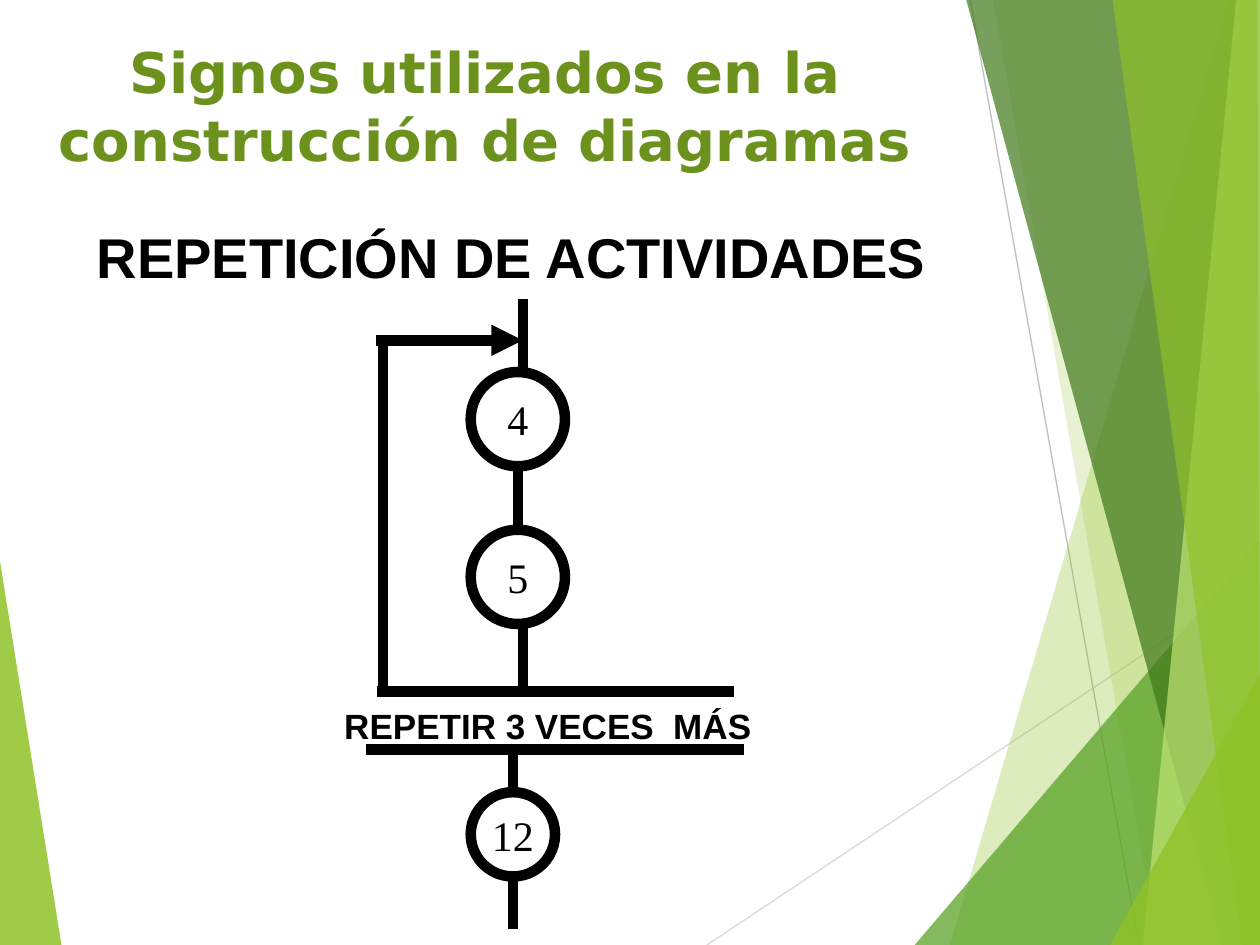
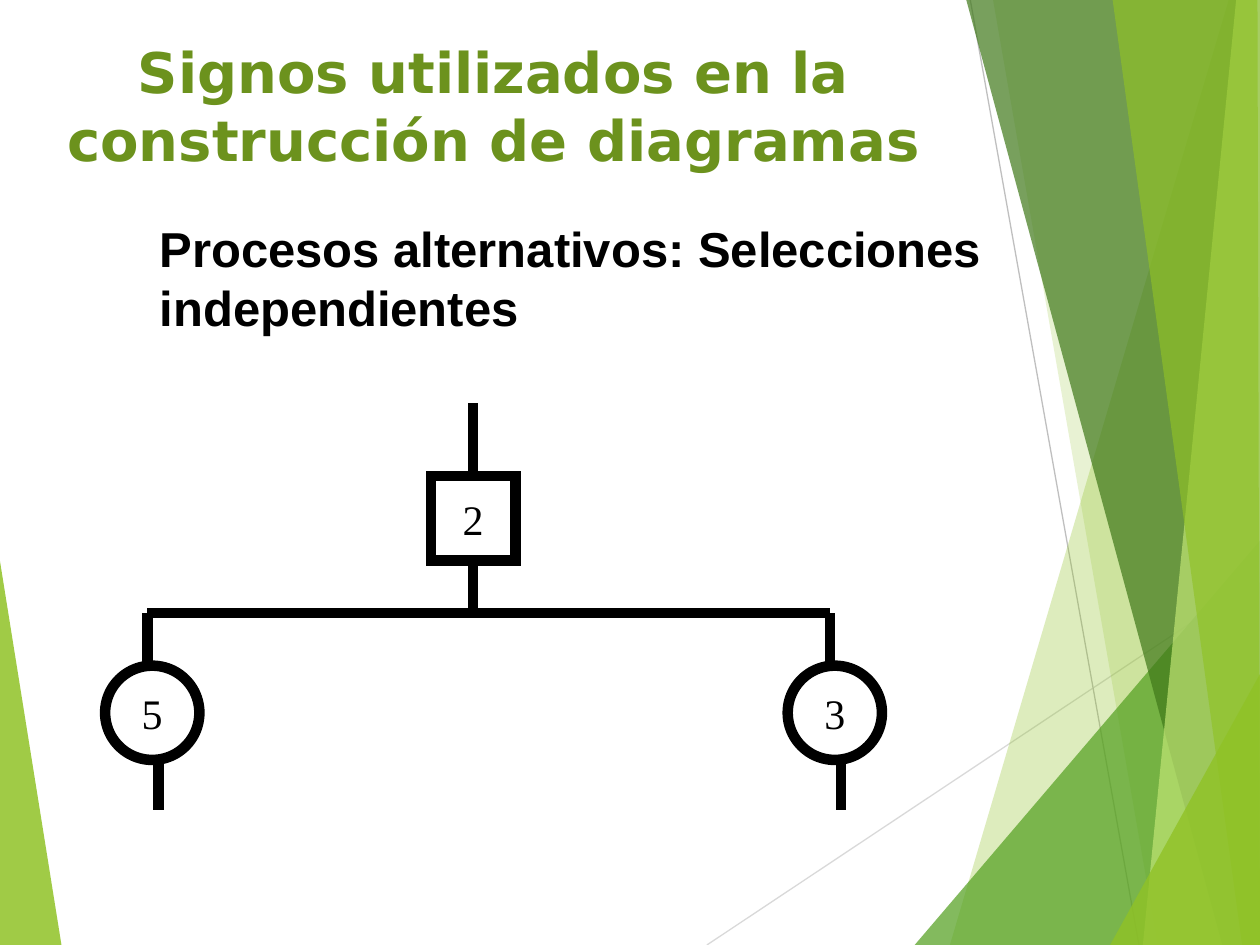
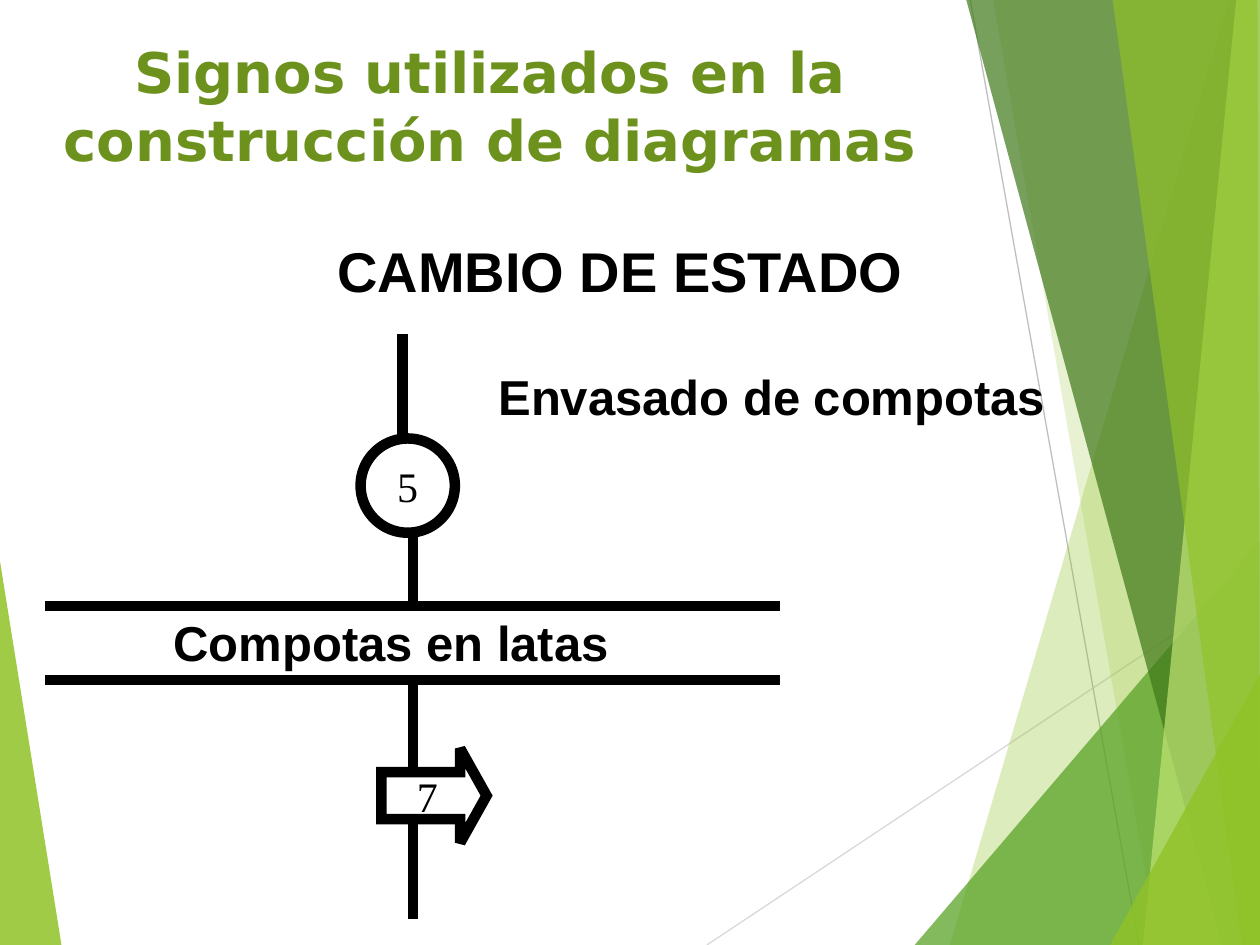
from lxml import etree
from pptx import Presentation
from pptx.dml.color import RGBColor
from pptx.enum import shapes, text
from pptx.oxml import ns
from pptx.util import Cm, Pt

WIDE, HIGH = 25.4, 19.05
LEAF = RGBColor(0x90, 0xC2, 0x26)
GRASS = RGBColor(0x54, 0xA0, 0x21)
PINE = RGBColor(0x3F, 0x78, 0x19)
LIME = RGBColor(0xC0, 0xE4, 0x74)
OLIVE = RGBColor(0x6C, 0x92, 0x1D)
PALE = RGBColor(0xD9, 0xD9, 0xD9)
GREY = RGBColor(0xBF, 0xBF, 0xBF)
BLACK = RGBColor(0, 0, 0)
KIND = shapes.MSO_SHAPE
TITLE = "Signos utilizados en la construcción de diagramas"
PAGE = (0, 0)

RAYS = [
    (PALE, 14.25, HIGH, WIDE, 11.63),
    (GREY, 19.56, 0, 22.96, HIGH),
]
BANDS = [
    (LEAF, 30, [(24.77, 0), (19.15, HIGH), (WIDE, HIGH), (WIDE, 0)]),
    (LEAF, 20, [(20.02, 0), (23.34, HIGH), (WIDE, HIGH), (WIDE, 0)]),
    (GRASS, 72, [(18.44, HIGH), (WIDE, 10.9), (WIDE, HIGH)]),
    (PINE, 70, [(19.48, 0), (24.64, HIGH), (WIDE, HIGH), (WIDE, 0)]),
    (LIME, 70, [(24.92, 0), (23.04, HIGH), (WIDE, HIGH), (WIDE, 0)]),
    (LEAF, 65, [(22.43, 0), (25.04, HIGH), (WIDE, HIGH), (25.35, 0)]),
    (LEAF, 80, [(22.38, HIGH), (WIDE, 13.59), (WIDE, HIGH)]),
]
WEDGE = (LEAF, 85, [(0, 11.31), (1.24, HIGH), (0, HIGH)])


def add_tag(node, name, **attrs):
    return etree.SubElement(node, ns.qn(name), attrs)


def place(box, x, y):
    return Cm(box[0] + x), Cm(box[1] + y)


def draw_band(slide, color, alpha, points):
    spots = [place(PAGE, *point) for point in points]
    pen = slide.shapes.build_freeform(*spots[0])
    pen.add_line_segments(spots[1:])
    band = pen.convert_to_shape()
    band.shadow.inherit = False
    band.line.fill.background()
    band.fill.solid()
    band.fill.fore_color.rgb = color
    tint = band.fill._xPr.find(".//" + ns.qn("a:srgbClr"))
    add_tag(tint, "a:alpha", val=str(alpha * 1000))


def draw_line(slide, box, x1, y1, x2, y2, color=BLACK, width=6, head=False):
    line = slide.shapes.add_connector(
        shapes.MSO_CONNECTOR.STRAIGHT, *place(box, x1, y1), *place(box, x2, y2))
    line.line.color.rgb = color
    line.line.width = Pt(width)
    if head:
        add_tag(line.line._get_or_add_ln(), "a:tailEnd", type="triangle")
    add_tag(line._element.spPr, "a:effectLst")


def draw_sign(slide, box, kind, x, y, w, h, label):
    sign = slide.shapes.add_shape(kind, *place(box, x, y), Cm(w), Cm(h))
    sign.shadow.inherit = False
    sign.fill.background()
    sign.line.color.rgb = BLACK
    sign.line.width = Pt(6)
    add_tag(sign.line._get_or_add_ln(), "a:miter", lim="800000")
    frame = sign.text_frame
    frame.word_wrap = False
    frame.vertical_anchor = text.MSO_ANCHOR.MIDDLE
    para = frame.paragraphs[0]
    para.text = label
    para.alignment = text.PP_ALIGN.CENTER
    para.font.name = "Times New Roman"
    para.font.size = Pt(24)
    para.font.color.rgb = BLACK
    return sign


def draw_ring(slide, box, x, y, label, size=1.9):
    draw_sign(slide, box, KIND.OVAL, x, y, size, size, label)


def add_words(slide, box, x, y, w, h, words, size, wrap=True,
              face="Arial", color=BLACK):
    label = slide.shapes.add_textbox(*place(box, x, y), Cm(w), Cm(h))
    frame = label.text_frame
    frame.word_wrap = wrap
    frame.auto_size = text.MSO_AUTO_SIZE.SHAPE_TO_FIT_TEXT
    para = frame.paragraphs[0]
    para.text = words
    para.font.name = face
    para.font.size = Pt(size)
    para.font.bold = True
    para.font.color.rgb = color
    return label


def start_slide(deck, width):
    slide = deck.slides.add_slide(deck.slide_layouts[6])
    draw_band(slide, *WEDGE)
    for color, *ends in RAYS:
        draw_line(slide, PAGE, *ends, color, 0.75)
    for band in BANDS:
        draw_band(slide, *band)
    title = add_words(slide, PAGE, 0.85, 0.64, width, 3, TITLE, 32,
                      face="DejaVu Sans", color=OLIVE)
    title.text_frame.paragraphs[0].alignment = text.PP_ALIGN.CENTER
    return slide


def draw_loop(slide, box):
    draw_ring(slide, box, 3.39, 1.48, "4")
    draw_ring(slide, box, 3.39, 4.66, "5")
    draw_ring(slide, box, 3.39, 9.95, "12", 1.7)
    for x, top, end in [(4.34, 3.38, 4.66), (4.44, 0, 1.48), (4.44, 6.6, 7.9),
                        (4.24, 9.09, 9.95), (4.24, 11.64, 12.7),
                        (1.62, 7.82, 0.84)]:
        draw_line(slide, box, x, top, x, end)
    draw_line(slide, box, 8.69, 7.92, 1.49, 7.92)
    draw_line(slide, box, 8.89, 9.09, 1.27, 9.09)
    draw_line(slide, box, 1.47, 0.84, 4.44, 0.84, head=True)
    note = add_words(slide, box, 0, 8.05, 9.73, 1.09,
                     "REPETIR 3 VECES  MÁS", 20)
    note.text_frame.margin_left = Cm(0.84)


def draw_fork(slide, box):
    draw_sign(slide, box, KIND.RECTANGLE, 6.57, 1.47, 1.7, 1.7, "2")
    draw_line(slide, box, 7.42, 0, 7.42, 1.47)
    draw_line(slide, box, 7.42, 3.17, 7.42, 4.16)
    draw_line(slide, box, 0.85, 4.23, 14.61, 4.23)
    for x, label in [(0, "5"), (13.76, "3")]:
        draw_line(slide, box, x + 0.85, 4.23, x + 0.85, 5.29)
        draw_ring(slide, box, x, 5.29, label)
        draw_line(slide, box, x + 1.07, 7.19, x + 1.07, 8.2)


def draw_change(slide, box):
    draw_ring(slide, box, 6.36, 2.11, "5")
    for x, top, end in [(7.2, 0, 2.11), (7.42, 4.01, 5.49),
                        (7.42, 6.98, 8.87), (7.42, 9.88, 11.79)]:
        draw_line(slide, box, x, top, x, end)
    for y in (5.49, 6.98):
        draw_line(slide, box, 0, y, 14.81, y)
    add_words(slide, box, 2.34, 5.49, 10.16, 1.45, "Compotas en latas", 28)
    arrow = draw_sign(slide, box, KIND.RIGHT_ARROW, 6.78, 8.36, 2.12, 1.9, "7")
    arrow.adjustments[0] = 0.5
    arrow.adjustments[1] = 0.28


def main():
    deck = Presentation()
    deck.slide_width, deck.slide_height = Cm(WIDE), Cm(HIGH)

    slide = start_slide(deck, 17.86)
    add_words(slide, PAGE, 1.7, 4.37, 17.4, 1.63,
              "REPETICIÓN DE ACTIVIDADES", 32, wrap=False)
    draw_loop(slide, (6.1, 6.02))

    slide = start_slide(deck, 18.21)
    add_words(slide, PAGE, 2.97, 4.29, 17.07, 2.64,
              "Procesos alternativos: Selecciones independientes", 28)
    draw_fork(slide, (2.12, 8.13))

    slide = start_slide(deck, 18.06)
    add_words(slide, PAGE, 6.55, 4.65, 11.99, 1.6,
              "CAMBIO DE ESTADO", 32, wrap=False)
    add_words(slide, PAGE, 9.8, 7.26, 11.56, 1.45,
              "Envasado de compotas", 28, wrap=False)
    draw_change(slide, (0.91, 6.73))

    deck.save("out.pptx")


if __name__ == "__main__":
    main()
